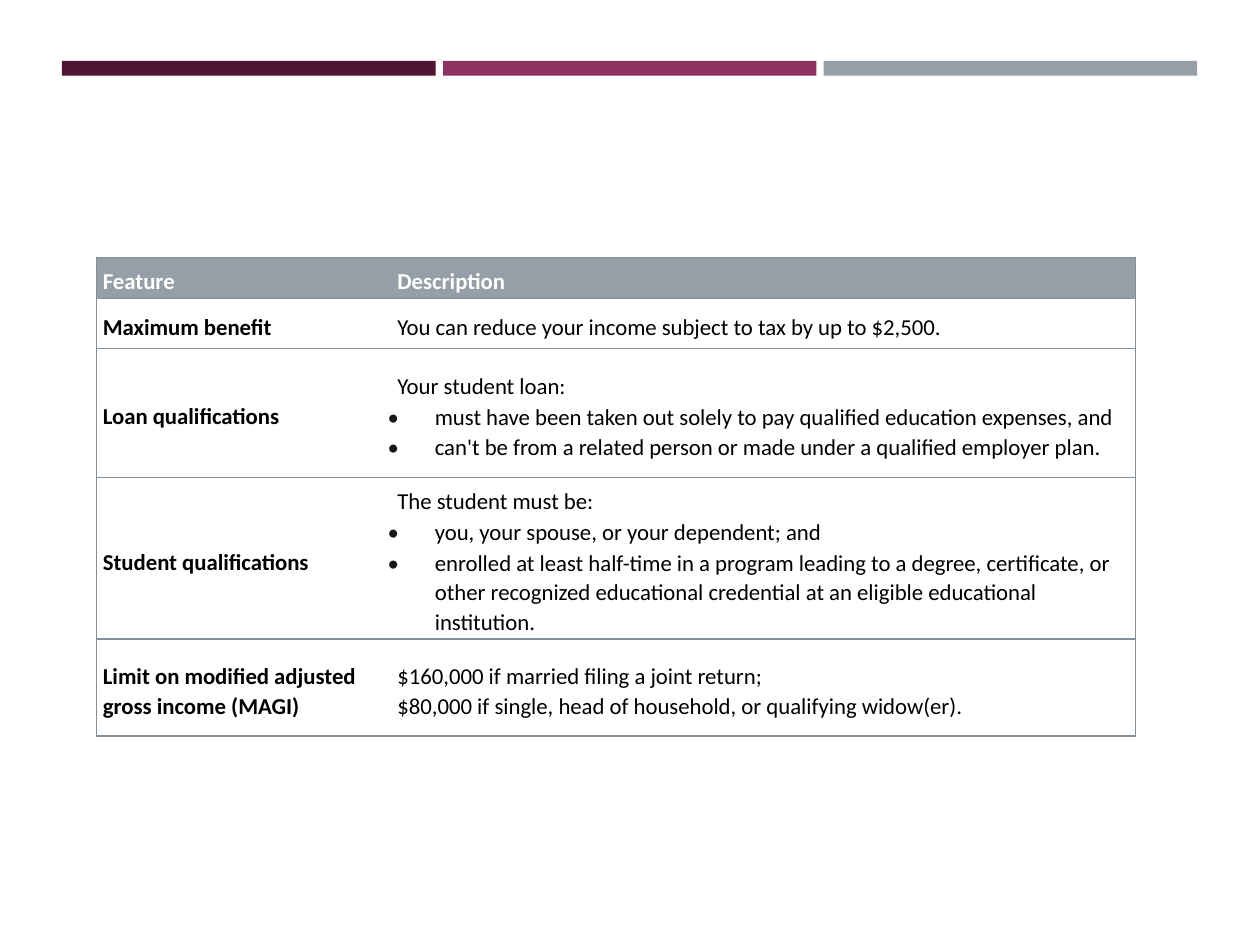
import pptx
import pptx.util
import pptx.dml.color
import pptx.enum.shapes
import pptx.enum.text
import pptx.oxml.ns
from lxml import etree

Pt = pptx.util.Pt
qn = pptx.oxml.ns.qn

HUES = {"plum": "4D1434", "rose": "903163", "gray": "969FA7", "line": "858F99",
        "dot": "181717", "black": "000000", "white": "FFFFFF"}
FONT, SIZE = "Calibri", 13

# Bars: colour, left, width
BARS = [("plum", 35.4, 213.6), ("rose", 253.2, 213.4), ("gray", 470.7, 213.4)]

# Rows: height, feature, description paragraphs (text, bulleted, line spacing, space after)
ROWS = [
    (22.3, "Feature", [("Description", False, 1.07, 0)]),
    (28.6, "Maximum benefit",
     [("You can reduce your income subject to tax by up to $2,500.", False, 1.07, 0)]),
    (73.7, "Loan qualifications",
     [("Your student loan:", False, 1.07, 0.7),
      ("must have been taken out solely to pay qualified education expenses, and",
       True, 1.07, 0),
      ("can't be from a related person or made under a qualified employer plan.",
       True, 1.07, 0)]),
    (72.7, "Student qualifications",
     [("The student must be:", False, 1.07, 0.7),
      ("you, your spouse, or your dependent; and", True, 1.05, 0.9),
      ("enrolled at least half-time in a program leading to a degree, certificate, "
       "or other recognized educational credential at an eligible educational "
       "institution.", True, 1.07, 0)]),
    (55.4, "Limit on modified adjusted gross income (MAGI)",
     [("$160,000 if married filing a joint return;", False, 1.05, 0),
      ("$80,000 if single, head of household, or qualifying widow(er).",
       False, 1.07, 0)]),
]
COLS = [162.7, 430.9]
LEFT, TOP = 55.2, 147.2


def rgb(name):
    return pptx.dml.color.RGBColor.from_string(HUES[name])


def hue(node, name):
    etree.SubElement(node, qn("a:srgbClr"), val=HUES[name])


def edge(cell, tag, shown):
    line = etree.SubElement(cell._tc.get_or_add_tcPr(), qn(tag), w=str(Pt(1)))
    if shown:
        hue(etree.SubElement(line, qn("a:solidFill")), "line")
    else:
        etree.SubElement(line, qn("a:noFill"))


def write(para, text, color, bold, left=0, dot=False, lead=1.07, after=0):
    para.line_spacing = lead
    para.space_after = Pt(after)
    props = para._p.get_or_add_pPr()
    props.set("marL", str(Pt(left)))
    props.set("indent", str(Pt(-left if dot else 0)))
    if dot:
        hue(etree.SubElement(props, qn("a:buClr")), "dot")
        etree.SubElement(props, qn("a:buFont"), typeface=FONT)
        etree.SubElement(props, qn("a:buChar"), char="•")
    run = para.add_run()
    run.text = text
    run.font.name, run.font.size, run.font.bold = FONT, Pt(SIZE), bold
    run.font.color.rgb = rgb(color)


deck = pptx.Presentation()
deck.slide_width, deck.slide_height = Pt(720), Pt(540)
slide = deck.slides.add_slide(deck.slide_layouts[6])

# Top bars
for color, left, wide in BARS:
    bar = slide.shapes.add_shape(pptx.enum.shapes.MSO_SHAPE.RECTANGLE,
                                 Pt(left), Pt(34.8), Pt(wide), Pt(8.4))
    bar.shadow.inherit = False
    bar.fill.solid()
    bar.fill.fore_color.rgb = rgb(color)
    bar.line.fill.background()

# Table grid
high = sum(row[0] for row in ROWS)
table = slide.shapes.add_table(len(ROWS), len(COLS), Pt(LEFT), Pt(TOP),
                               Pt(sum(COLS)), Pt(high)).table
table.first_row = table.horz_banding = False
for col, wide in zip(table.columns, COLS):
    col.width = Pt(wide)

# Table cells
for r, (tall, name, paras) in enumerate(ROWS):
    table.rows[r].height = Pt(tall)
    head = r == 0
    color = "white" if head else "black"
    for c in range(len(COLS)):
        cell = table.cell(r, c)
        cell.vertical_anchor = pptx.enum.text.MSO_ANCHOR.MIDDLE
        cell.margin_left, cell.margin_top = Pt(3.6), Pt(5)
        cell.margin_right, cell.margin_bottom = Pt(5), Pt(1.4)
        for tag, shown in (("a:lnL", c == 0), ("a:lnR", c == 1),
                           ("a:lnT", True), ("a:lnB", True)):
            edge(cell, tag, shown)
        cell.fill.solid()
        cell.fill.fore_color.rgb = rgb("gray" if head else "white")

    write(table.cell(r, 0).text_frame.paragraphs[0], name, color, True)
    frame = table.cell(r, 1).text_frame
    for i, (text, dot, lead, after) in enumerate(paras):
        para = frame.add_paragraph() if i else frame.paragraphs[0]
        write(para, text, color, head, 27 if dot else 5.6, dot, lead, after)

deck.save("out.pptx")
